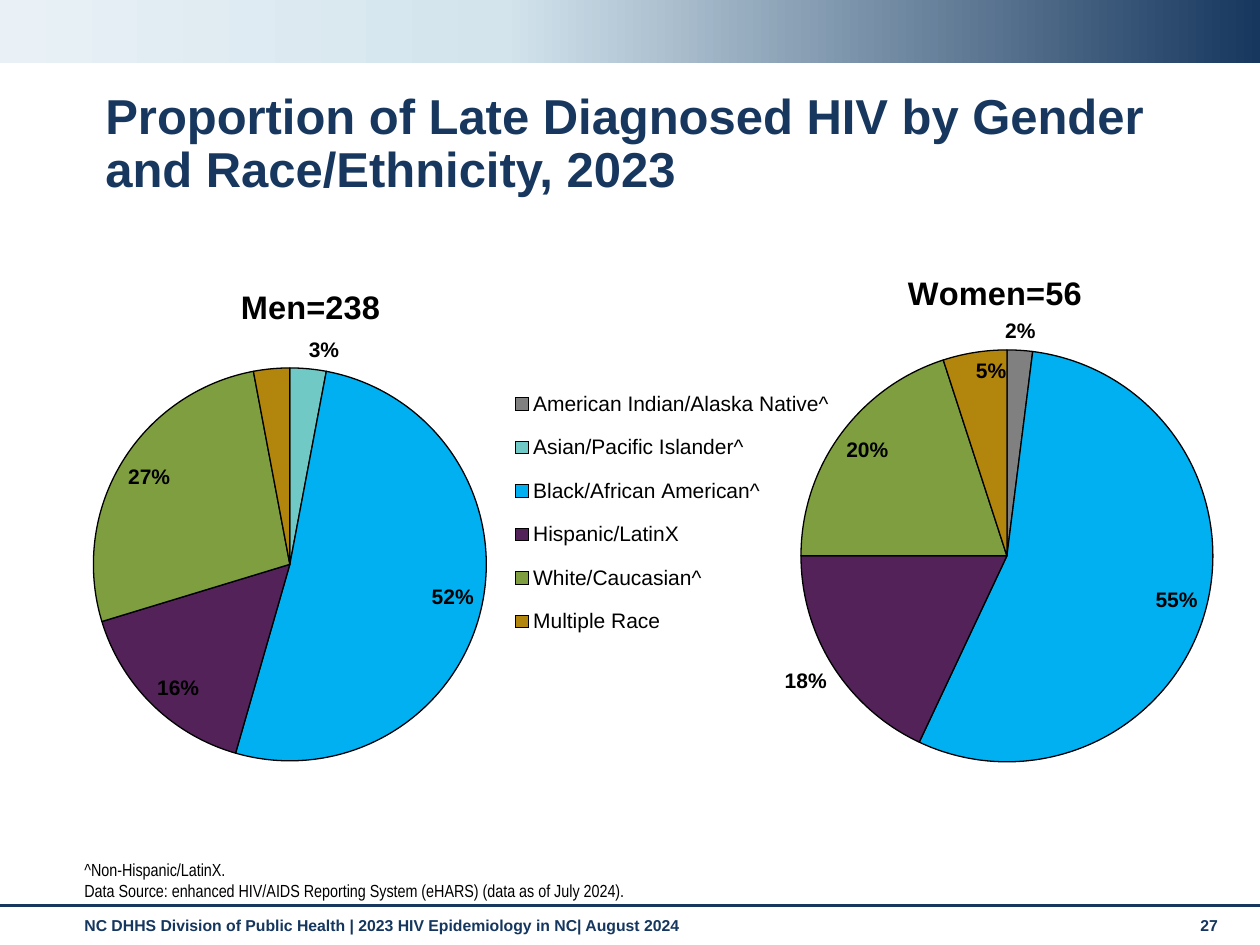
from copy import deepcopy

from lxml import etree
from pptx import Presentation, util as u
from pptx.chart.data import CategoryChartData
from pptx.dml.color import RGBColor
from pptx.enum import chart as ch, shapes, text
from pptx.oxml.ns import qn

NAVY = RGBColor(0x17, 0x37, 0x5E)
FOOTER_NAVY = RGBColor(0x15, 0x36, 0x5E)
PALE_BLUE = RGBColor(0xD3, 0xE4, 0xED)
PALEST_BLUE = RGBColor(0xE9, 0xF1, 0xF6)
BLACK = RGBColor(0, 0, 0)
RACE_COLORS = {
    "American Indian/Alaska Native^": RGBColor(0x80, 0x80, 0x80),
    "Asian/Pacific Islander^": RGBColor(0x71, 0xC9, 0xC5),
    "Black/African American^": RGBColor(0x00, 0xB0, 0xF0),
    "Hispanic/LatinX": RGBColor(0x52, 0x22, 0x58),
    "White/Caucasian^": RGBColor(0x7F, 0x9E, 0x3F),
    "Multiple Race": RGBColor(0xB2, 0x85, 0x0D),
}


def px(n):
    return u.Emu(round(n * 914400 / 126))


def set_font(font, size, color=BLACK, bold=False, name="Arial"):
    font.size, font.bold, font.name = u.Pt(size), bold, name
    font.color.rgb = color


def add_text(slide, box, lines, size, color, bold=False, name="Arial",
             anchor=text.MSO_ANCHOR.TOP, spacing=None):
    frame = slide.shapes.add_textbox(*map(px, box)).text_frame
    frame.word_wrap = True
    frame.vertical_anchor = anchor
    frame.text = lines
    for paragraph in frame.paragraphs:
        paragraph.line_spacing = spacing
        for run in paragraph.runs:
            set_font(run.font, size, color, bold, name)


def add_header(slide, box):
    """Band that fades from navy on the right to pale blue on the left."""
    band = slide.shapes.add_shape(shapes.MSO_SHAPE.RECTANGLE, *map(px, box))
    band.shadow.inherit = False
    band.line.fill.background()
    band.fill.gradient()
    band.fill.gradient_angle = 180
    stop_list = band._element.spPr.find(".//" + qn("a:gsLst"))
    stop_list.append(deepcopy(stop_list[-1]))
    stops = [(0, NAVY), (0.6, PALE_BLUE), (1, PALEST_BLUE)]
    for stop, (position, color) in zip(band.fill.gradient_stops, stops):
        stop.position = position
        stop.color.rgb = color


def add_footer(slide, box):
    left, top, width, height = box
    rule = slide.shapes.add_connector(
        shapes.MSO_CONNECTOR.STRAIGHT, px(left), px(top), px(left + width), px(top))
    rule.line.color.rgb = NAVY
    rule.line.width = u.Pt(1.75)
    etree.SubElement(rule._element.spPr, qn("a:effectLst"))
    add_text(slide, (left + 72, top + 4, 1101, height - 4),
             "NC DHHS Division of Public Health | 2023 HIV Epidemiology in NC| August 2024",
             9, FOOTER_NAVY, bold=True)
    add_text(slide, (left + 1188, top + 4, 55, height - 4), "27",
             9, FOOTER_NAVY, bold=True)


def place(part, index, frame, spot, inner=False):
    """Put a chart part at a px spot (x, y and perhaps w, h) within its frame."""
    for old in part.findall(qn("c:layout")):
        part.remove(old)
    layout = etree.Element(qn("c:layout"))
    part.insert(index, layout)
    manual = etree.SubElement(layout, qn("c:manualLayout"))
    settings = [("layoutTarget", "inner")] if inner else []
    settings += [("xMode", "edge"), ("yMode", "edge")]
    settings += [(key, f"{value / side:.4f}")
                 for key, value, side in zip("xywh", spot, frame[2:] * 2)]
    for tag, value in settings:
        etree.SubElement(manual, qn("c:" + tag), val=value)


def hide_label(labels, index):
    label = labels._element.xpath(f'c:dLbl[c:idx/@val="{index}"]')[0]
    for child in label[1:]:
        label.remove(child)
    etree.SubElement(label, qn("c:delete"), val="1")


def add_pie(slide, box, title, title_spot, pie_spot, categories, values,
            outside, hidden, legend_spot=None):
    """Pie of shares; outside and hidden list the slices with such labels."""
    data = CategoryChartData(number_format="0%")
    data.categories = categories
    data.add_series("Series 1", values)
    chart = slide.shapes.add_chart(ch.XL_CHART_TYPE.PIE, *map(px, box), data).chart
    set_font(chart.font, 10)

    chart.has_title = True
    heading = chart.chart_title.text_frame
    heading.text = title
    set_font(heading.paragraphs[0].runs[0].font, 18.6, bold=True)
    place(chart.chart_title._element, 1, box, title_spot)

    plot = chart.plots[0]
    plot.vary_by_categories = True
    place(plot._element.getparent(), 0, box, pie_spot, inner=True)

    series = plot.series[0]
    labels = series.data_labels
    labels.show_value = True
    labels.number_format, labels.number_format_is_linked = "0%", False
    set_font(labels.font, 12, bold=True)
    for index, color in enumerate(RACE_COLORS.values()):
        point = series.points[index]
        point.format.fill.solid()
        point.format.fill.fore_color.rgb = color
        point.format.line.color.rgb = BLACK
        point.format.line.width = u.Pt(0.75)
        set_font(point.data_label.font, 12, bold=True)
        point.data_label.position = (
            ch.XL_LABEL_POSITION.OUTSIDE_END if index in outside
            else ch.XL_LABEL_POSITION.INSIDE_END)
    for index in hidden:
        hide_label(labels, index)

    chart.has_legend = legend_spot is not None
    if legend_spot:
        chart.legend.position = ch.XL_LEGEND_POSITION.RIGHT
        chart.legend.include_in_layout = False
        set_font(chart.legend.font, 12)
        place(chart.legend._element, 1, box, legend_spot)


def main():
    prs = Presentation()
    prs.slide_width, prs.slide_height = px(1260), px(945)
    slide = prs.slides.add_slide(prs.slide_layouts[6])

    add_header(slide, (0, 0, 1260, 63))
    add_footer(slide, (0, 906, 1260, 41))
    add_text(slide, (93, 86, 1081, 76),
             "Proportion of Late Diagnosed HIV by Gender and Race/Ethnicity, 2023",
             28, NAVY, bold=True, spacing=0.9)
    add_pie(slide, (-11, 256, 929, 513), "Men=238", (246, 23), (104, 112, 394, 393),
            list(RACE_COLORS), (0, 0.03, 0.52, 0.16, 0.27, 0.03),
            outside=(0, 1), hidden=(5,), legend_spot=(516, 116, 335, 282))
    add_pie(slide, (590, 256, 800, 513), "Women=56", (312, 9), (210, 94, 414, 412),
            [str(n + 1) for n in range(len(RACE_COLORS))],
            (0.02, 0, 0.55, 0.18, 0.2, 0.05), outside=(0, 3), hidden=(1,))
    add_text(slide, (72, 862, 1101, 45),
             "^Non-Hispanic/LatinX.\nData Source: enhanced HIV/AIDS Reporting System "
             "(eHARS) (data as of July 2024).",
             10, BLACK, name="Arial Narrow", anchor=text.MSO_ANCHOR.BOTTOM)
    prs.save("out.pptx")


if __name__ == "__main__":
    main()
